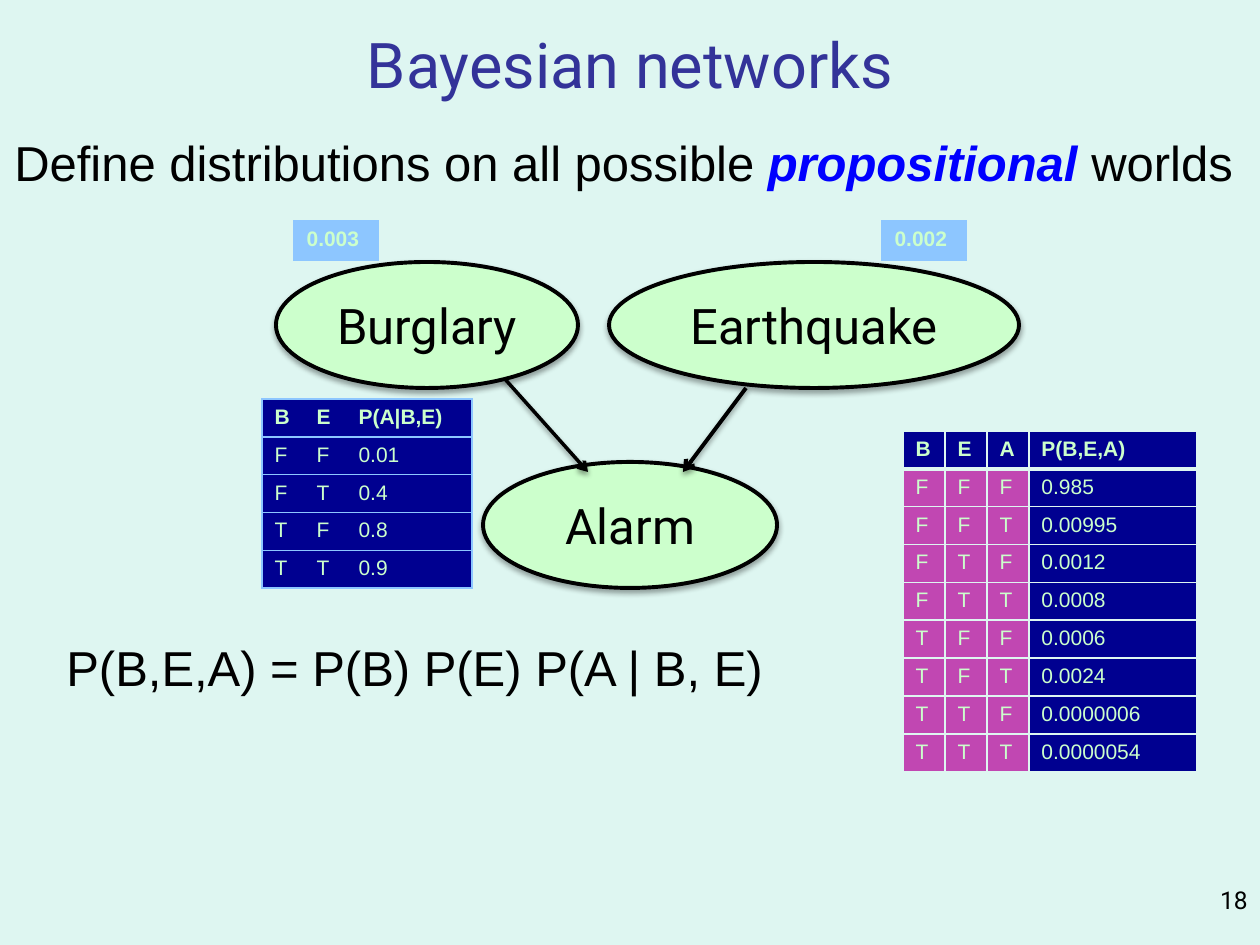
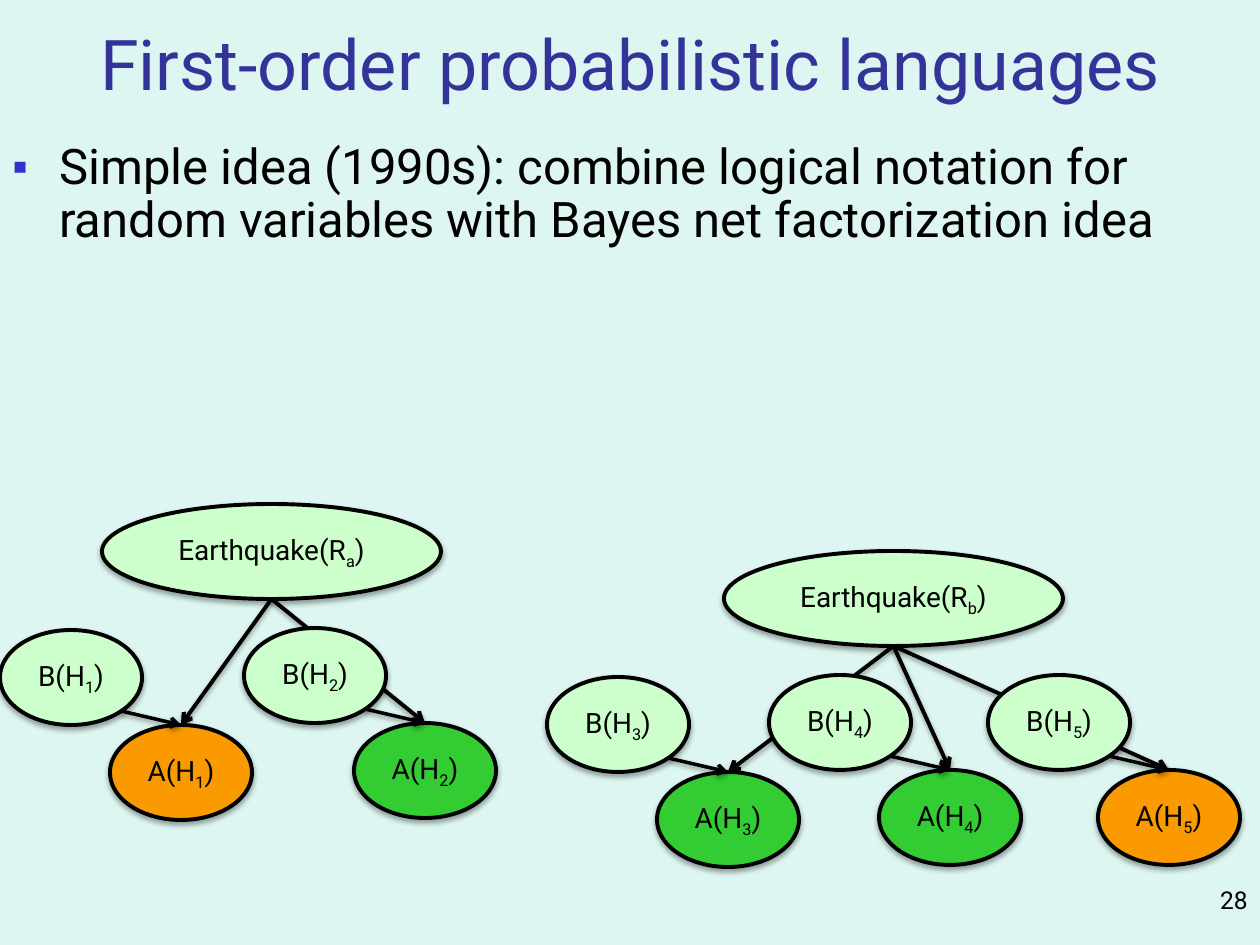
from lxml.etree import SubElement as Sub
from pptx import Presentation
from pptx.dml.color import RGBColor as Rgb
from pptx.enum.shapes import MSO_CONNECTOR as Line
from pptx.enum.shapes import MSO_SHAPE as Shape
from pptx.enum.text import MSO_ANCHOR as Anchor
from pptx.enum.text import PP_ALIGN as Align
from pptx.oxml.ns import qn
from pptx.util import Pt

SCALE = 914400 / 126
WIDE, HIGH = 1260, 945
BACK, INK, HEAD = "DEF6F1", "000000", "333399"
MINT, NAVY, PINK, SKY = "CCFFCC", "000090", "C147B2", "8DC6FF"
GOLD, GREEN, BLUE, DOT = "FA9A00", "33CC33", "0000FF", "3333CC"
SANS, PLAIN = "Roboto", "Arial"


def px(*nums):
    return [round(num * SCALE) for num in nums]


def hue(code):
    return Rgb.from_string(code)


def paint(fill, code):
    fill.solid()
    fill.fore_color.rgb = hue(code)


def tag(parent, name, **attrs):
    return Sub(parent, qn(f"a:{name}"), {key: str(val) for key, val in attrs.items()})


def tint(parent, code):
    return tag(parent, "srgbClr", val=code)


def say(para, text, size, face=SANS, code=INK, bold=False, slant=False, base=0):
    run = para.add_run()
    run.text = text
    font = run.font
    font.size, font.name, font.bold, font.italic = Pt(size), face, bold, slant
    font.color.rgb = hue(code)
    if base:
        run._r.get_or_add_rPr().set("baseline", str(base * 1000))


def shade(item, alpha, drop):
    glow = tag(tag(item.element.spPr, "effectLst"), "outerShdw", blurRad=Pt(3.1),
               dist=Pt(drop), dir=5400000, rotWithShape=0)
    tag(tint(glow, INK), "alpha", val=alpha * 1000)


def note(slide, box, align=Align.LEFT, anchor=Anchor.TOP, wrap=True):
    frame = slide.shapes.add_textbox(*px(*box)).text_frame
    frame.word_wrap, frame.vertical_anchor = wrap, anchor
    para = frame.paragraphs[0]
    para.alignment = align
    return para


def node(shapes, box, text, size, sub="", fill=MINT):
    oval = shapes.add_shape(Shape.OVAL, *px(*box))
    paint(oval.fill, fill)
    oval.line.color.rgb = hue(INK)
    oval.line.width = Pt(2.25)
    shade(oval, 35, 1.8)
    frame = oval.text_frame
    frame.vertical_anchor = Anchor.MIDDLE
    para = frame.paragraphs[0]
    para.alignment = Align.CENTER
    say(para, text, size)
    if sub:
        say(para, sub, size, base=-25)
        say(para, ")", size)


def arrow(shapes, start, end, width=2.25):
    link = shapes.add_connector(Line.STRAIGHT, *px(*start, *end))
    link.line.color.rgb = hue(INK)
    link.line.width = Pt(width)
    tag(link.line._get_or_add_ln(), "tailEnd", type="arrow")
    shade(link, 38, 1.6)


def edge(cell, sides):
    props = cell._tc.get_or_add_tcPr()
    for spot, side in enumerate("LRTB"):
        code, width = sides.get(side, (None, 0))
        line = tag(props, f"ln{side}", w=Pt(width))
        if code:
            tint(tag(line, "solidFill"), code)
        else:
            tag(line, "noFill")
        props.insert(spot, line)


def grid(slide, box, rows, cols, fill, sides):
    table = slide.shapes.add_table(len(rows), len(cols), *px(*box)).table
    table.horz_banding = False
    for col, width in zip(table.columns, px(*cols)):
        col.width = width
    for y, row in enumerate(rows):
        for x, text in enumerate(row):
            cell = table.cell(y, x)
            paint(cell.fill, fill(y, x))
            say(cell.text_frame.paragraphs[0], text, 12, PLAIN, MINT, bold=y == 0)
            edge(cell, sides(y, x))


def prior(slide, left, top, text):
    grid(slide, (left, top, 84, 39), [[text]], [84], lambda y, x: SKY,
         lambda y, x: dict.fromkeys("LRTB", (SKY, 1)))


def given(slide, left, top):
    rows = [("B", "E", "P(A|B,E)")]
    rows += [(*key, val) for key, val in zip(("FF", "FT", "TF", "TT"), ("0.01", "0.4", "0.8", "0.9"))]

    def sides(y, x):
        keys = "TB" + {0: "L", 2: "R"}.get(x, "")
        return dict.fromkeys(keys, (SKY, 1))

    grid(slide, (left, top, 210, 189), rows, [42, 42, 126], lambda y, x: NAVY, sides)


def joint(slide, left, top):
    odds = ("0.985", "0.00995", "0.0012", "0.0008", "0.0006", "0.0024", "0.0000006", "0.0000054")
    keys = [(b, e, a) for b in "FT" for e in "FT" for a in "FT"]
    rows = [("B", "E", "A", "P(B,E,A)")]
    rows += [(*key, val) for key, val in zip(keys, odds)]

    def sides(y, x):
        thick = {0: "B", 1: "T"}.get(y)
        return {side: (BACK, 3 if side == thick else 1) for side in "LRTB"}

    grid(slide, (left, top, 294, 340), rows, [42, 42, 42, 168],
         lambda y, x: PINK if y and x < 3 else NAVY, sides)


def graph(slide, left, top):
    shapes = slide.shapes
    for x, y, width, text in ((0, 0, 302, "Burglary"), (207, 200, 294, "Alarm"),
                              (333, 0, 410, "Earthquake")):
        node(shapes, (left + x, top + y, width, 126), text, 28)
    for x, y, end, width in ((228, 116, 312, 2), (470, 126, 407, 2.25)):
        arrow(shapes, (left + x, top + y), (left + end, top + 210), width)


def quake(slide, left, top, name, root, homes):
    shapes = slide.shapes.add_group_shape().shapes
    width, high, small = 339, 95, 142
    for x, y, num, fill in homes:
        arrow(shapes, (left + root + width / 2, top + high),
              (left + x + 110 + small / 2, top + y + high))
    node(shapes, (left + root, top, width, high), "Earthquake(R", 16, name)
    for x, y, num, fill in homes:
        x, y = left + x, top + y
        node(shapes, (x, y, small, high), "B(H", 16, num)
        node(shapes, (x + 110, y + high, small, high), "A(H", 16, num, fill)
        arrow(shapes, (x + 121, y + 81), (x + 110 + small / 2, y + high), 2)


def point(slide, box, text):
    para = note(slide, box)
    para.line_spacing, para.space_before = 0.9, Pt(5.6)
    say(para, text, 28)
    props = para._p.get_or_add_pPr()
    inset, = px(47)
    props.set("marL", str(inset))
    props.set("indent", str(-inset))
    tint(tag(props, "buClr"), DOT)
    tag(props, "buSzPct", val=90000)
    tag(props, "buFont", typeface=PLAIN)
    tag(props, "buChar", char="▪")


def page(deck, title, size, num):
    slide = deck.slides.add_slide(deck.slide_layouts[6])
    paint(slide.background.fill, BACK)
    say(note(slide, (0, 0, WIDE, 126), Align.CENTER, Anchor.MIDDLE), title, size, code=HEAD)
    say(note(slide, (1155, 879, 105, 66), Align.RIGHT), num, 14)
    return slide


def bayes(deck):
    slide = page(deck, "Bayesian networks", 36, "18")
    graph(slide, 276, 262)
    para = note(slide, (2, 126, 1266, 72), wrap=False)
    say(para, "Define distributions on all possible ", 28, PLAIN)
    say(para, "propositional", 28, PLAIN, BLUE, bold=True, slant=True)
    say(para, " worlds", 28, PLAIN)
    para = note(slide, (54, 631, 730, 72), wrap=False)
    say(para, "P(B,E,A) = P(B) P(E) P(A | B, E)", 28, PLAIN)
    prior(slide, 882, 221, "0.002")
    prior(slide, 294, 221, "0.003")
    joint(slide, 903, 431)
    given(slide, 262, 399)


def logic(deck):
    slide = page(deck, "First-order probabilistic languages", 40, "28")
    point(slide, (0, 136, WIDE, 703), "Simple idea (1990s): combine logical notation for "
          "random variables with Bayes net factorization idea")
    quake(slide, 0, 504, "a", 102, [(0, 126, "1", GOLD), (244, 124, "2", GREEN)])
    quake(slide, 547, 551, "b", 177, [(0, 126, "3", GREEN), (222, 124, "4", GREEN),
                                      (441, 124, "5", GOLD)])


def main():
    deck = Presentation()
    deck.slide_width, deck.slide_height = px(WIDE, HIGH)
    bayes(deck)
    logic(deck)
    deck.save("out.pptx")


if __name__ == "__main__":
    main()
